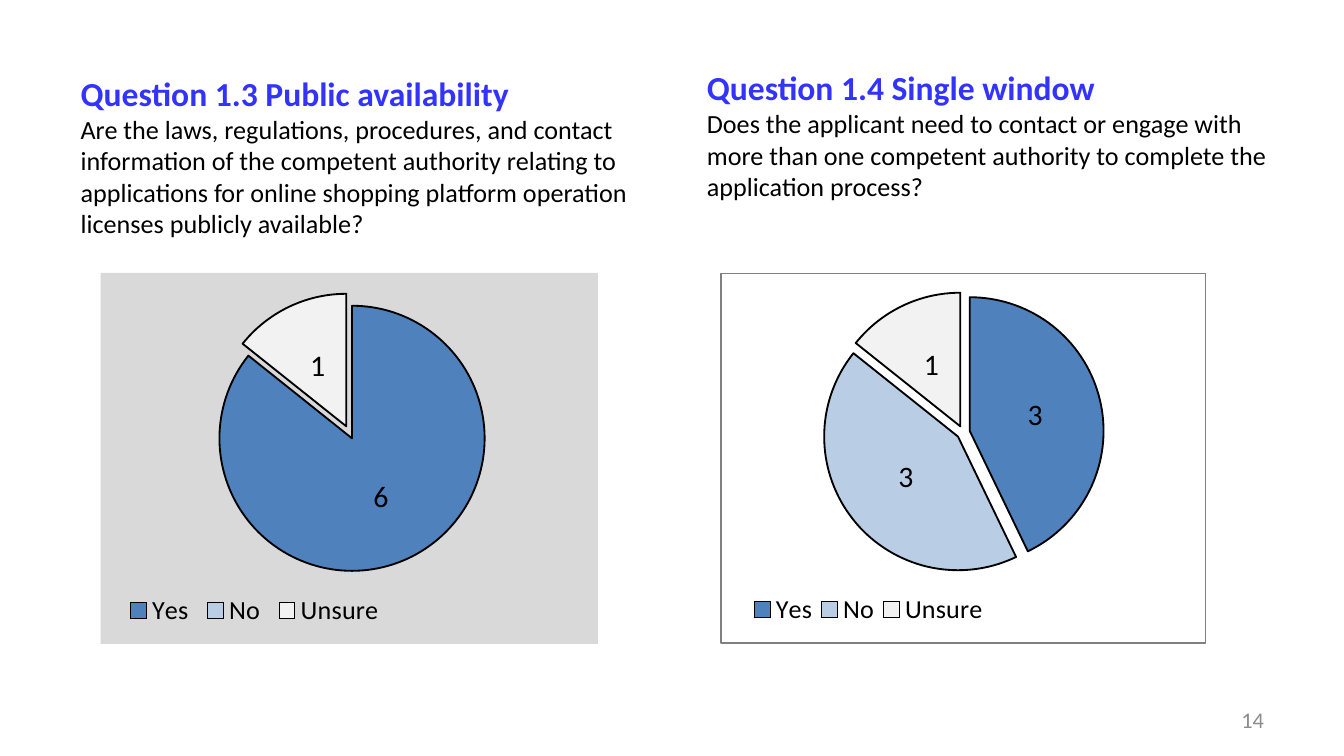
from dataclasses import dataclass

import lxml.etree
import pptx
import pptx.chart.data
import pptx.dml.color
import pptx.enum.chart
import pptx.enum.text
import pptx.oxml
import pptx.oxml.ns
import pptx.util

Cm = pptx.util.Cm
Pt = pptx.util.Pt
qn = pptx.oxml.ns.qn

FONT = "Calibri"
COLORS = {
    "heading": "3333FF", "text": "000000", "number": "8C8C8C",
    "yes": "4F81BD", "no": "B9CDE5", "unsure": "F2F2F2",
    "panel": "D9D9D9", "frame": "808080",
}
ANSWERS = {"Yes": "yes", "No": "no", "Unsure": "unsure"}
HEADING = {"size": Pt(18), "bold": True, "name": FONT}
BODY = {"size": Pt(14), "bold": False, "name": FONT}
NUMBER = {"size": Pt(12), "name": FONT}
LABEL = {"size": Pt(16), "name": FONT}


@dataclass(frozen=True)
class Box:
    left: float
    top: float
    width: float
    height: float


@dataclass(frozen=True)
class Question:
    heading: str
    body: str
    text_box: Box
    chart_box: Box
    counts: tuple[int, ...]
    pie_area: Box
    legend_area: Box
    panel_xml: str
    is_title: bool = False


def solid(name: str) -> str:
    return f'<a:solidFill><a:srgbClr val="{COLORS[name]}"/></a:solidFill>'


QUESTIONS = (
    Question(
        "Question 1.3 Public availability",
        "Are the laws, regulations, procedures, and contact information of the "
        "competent authority relating to applications for online shopping platform "
        "operation licenses publicly available?",
        Box(1.27, 1.55, 11.43, 2.79), Box(1.9, 5.16, 9.4, 7.01), (6, 0, 1),
        Box(0.22, 0.05, 0.56, 0.76), Box(0.04, 0.86, 0.54, 0.1),
        solid("panel") + "<a:ln><a:noFill/></a:ln>", True,
    ),
    Question(
        "Question 1.4 Single window",
        "Does the applicant need to contact or engage with more than one competent "
        "authority to complete the application process?",
        Box(13.11, 1.35, 11.43, 2.39), Box(13.61, 5.16, 9.19, 7.01), (3, 3, 1),
        Box(0.21, 0.05, 0.58, 0.76), Box(0.05, 0.86, 0.51, 0.1),
        f'<a:noFill/><a:ln w="9525">{solid("frame")}</a:ln>',
    ),
)


def rgb(name: str) -> pptx.dml.color.RGBColor:
    return pptx.dml.color.RGBColor.from_string(COLORS[name])


def lengths(box: Box) -> tuple:
    return Cm(box.left), Cm(box.top), Cm(box.width), Cm(box.height)


def format_font(font, values: dict, color: str) -> None:
    for attribute, value in values.items():
        setattr(font, attribute, value)
    font.color.rgb = rgb(color)


def add_run(paragraph, words: str, values: dict, color: str) -> None:
    run = paragraph.add_run()
    run.text = words
    format_font(run.font, values, color)


def prepare_frame(shape):
    frame = shape.text_frame
    settings = {
        "word_wrap": True,
        "auto_size": pptx.enum.text.MSO_AUTO_SIZE.NONE,
        "vertical_anchor": pptx.enum.text.MSO_ANCHOR.MIDDLE,
    }
    for attribute, value in settings.items():
        setattr(frame, attribute, value)
    return frame


def write_question(slide, question: Question) -> None:
    if question.is_title:
        holder = slide.shapes.title
        places = zip(("left", "top", "width", "height"), lengths(question.text_box))
        for attribute, value in places:
            setattr(holder, attribute, value)
    else:
        holder = slide.shapes.add_textbox(*lengths(question.text_box))
    paragraph = prepare_frame(holder).paragraphs[0]
    paragraph.alignment = pptx.enum.text.PP_ALIGN.LEFT
    add_run(paragraph, question.heading, HEADING, "heading")
    paragraph.add_line_break()
    add_run(paragraph, question.body, BODY, "text")


def chart_xml(tag: str, content: str):
    namespaces = pptx.oxml.ns.nsdecls("c", "a")
    return pptx.oxml.parse_xml(f"<c:{tag} {namespaces}>{content}</c:{tag}>")


def place_part(part, area: Box, target: str = "") -> None:
    for old in part.findall(qn("c:layout")):
        part.remove(old)
    content = target + '<c:xMode val="edge"/><c:yMode val="edge"/>'
    for key, value in zip("xywh", (area.left, area.top, area.width, area.height)):
        content += f'<c:{key} val="{value}"/>'
    layout = chart_xml("layout", f"<c:manualLayout>{content}</c:manualLayout>")
    position = part.find(qn("c:legendPos"))
    if position is None:
        part.insert(0, layout)
    else:
        position.addnext(layout)


def draw_pie(slide, question: Question) -> None:
    answers = pptx.chart.data.CategoryChartData()
    answers.categories = list(ANSWERS)
    answers.add_series("Series 1", question.counts)
    chart = slide.shapes.add_chart(
        pptx.enum.chart.XL_CHART_TYPE.PIE, *lengths(question.chart_box), answers
    ).chart
    chart.has_title = False
    format_font(chart.font, {"size": Pt(10), "name": FONT}, "text")
    chart.has_legend = True
    chart.legend.position = pptx.enum.chart.XL_LEGEND_POSITION.BOTTOM
    chart.legend.include_in_layout = False
    format_font(chart.legend.font, BODY, "text")
    chart.plots[0].vary_by_categories = True

    series = chart.plots[0].series[0]
    series.format.line.color.rgb = rgb("text")
    series.format.line.width = Pt(1)
    for index, color in enumerate(ANSWERS.values()):
        slice_format = series.points[index].format
        slice_format.fill.solid()
        slice_format.fill.fore_color.rgb = rgb(color)
        slice_format.line.color.rgb = rgb("text")
        slice_format.line.width = Pt(1)
    series_xml = series.format.line and chart.plots[0].series[0]._element
    explosion = lxml.etree.Element(qn("c:explosion"), val="5")
    series_xml.find(qn("c:spPr")).addnext(explosion)

    labels = series.data_labels
    labels.show_value = True
    labels.position = pptx.enum.chart.XL_LABEL_POSITION.CENTER
    format_font(labels.font, LABEL, "text")
    for index, count in enumerate(question.counts):
        if count == 0:
            hidden = chart_xml("dLbl", f'<c:idx val="{index}"/><c:delete val="1"/>')
            series_xml.find(qn("c:dLbls")).insert(0, hidden)

    root = series_xml.getroottree().getroot()
    plot_area = root.find(".//" + qn("c:plotArea"))
    place_part(plot_area, question.pie_area, '<c:layoutTarget val="inner"/>')
    place_part(root.find(".//" + qn("c:legend")), question.legend_area)
    root.find(qn("c:chart")).addnext(chart_xml("spPr", question.panel_xml))


def main() -> None:
    deck = pptx.Presentation()
    deck.slide_width, deck.slide_height = Cm(25.4), Cm(14.29)
    slide = deck.slides.add_slide(deck.slide_layouts[5])
    for question in QUESTIONS:
        write_question(slide, question)
        draw_pie(slide, question)
    page = slide.shapes.add_textbox(*lengths(Box(18.21, 13.23, 5.93, 0.76)))
    paragraph = prepare_frame(page).paragraphs[0]
    paragraph.alignment = pptx.enum.text.PP_ALIGN.RIGHT
    add_run(paragraph, "14", NUMBER, "number")
    deck.save("out.pptx")


if __name__ == "__main__":
    main()
